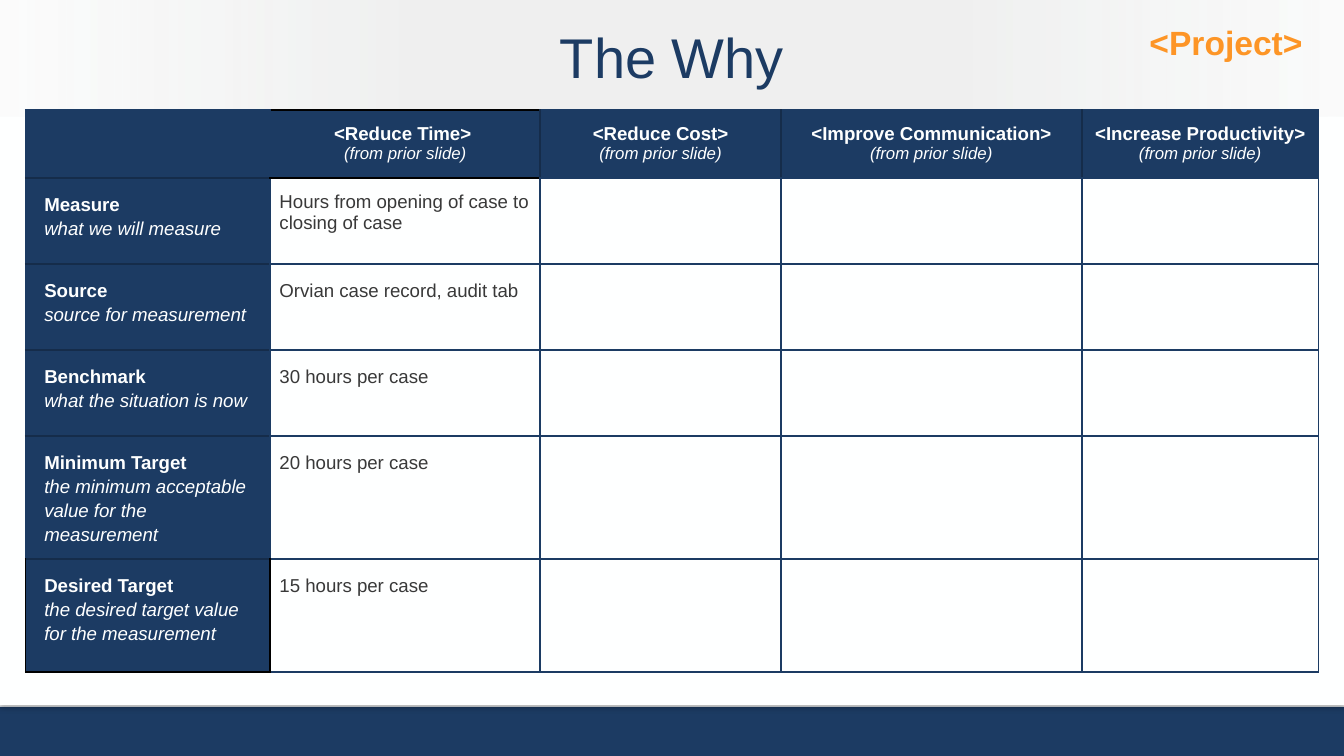
from pptx import Presentation
from pptx.dml.color import RGBColor
from pptx.enum.shapes import MSO_SHAPE
from pptx.enum.text import MSO_ANCHOR, PP_ALIGN
from pptx.oxml import parse_xml
from pptx.oxml.ns import nsdecls
from pptx.util import Inches, Pt

# Content
TITLE = "The Why"
PROJECT = "<Project>"
LINE_BREAK, NEW_PARAGRAPH = "\v", "\n"
GOALS = [  # goal, what separates it from its note
    ("<Reduce Time> ", LINE_BREAK),
    ("<Reduce Cost>", NEW_PARAGRAPH),
    ("<Improve Communication>", LINE_BREAK),
    ("<Increase Productivity>", LINE_BREAK),
]
GOAL_NOTE = "(from prior slide)"
MEASURES = [  # label, explanation, value for the first goal
    ("Measure", "what we will measure", "Hours from opening of case to closing of case"),
    ("Source", "source for measurement", "Orvian case record, audit tab"),
    ("Benchmark", "what the situation is now", "30 hours per case"),
    ("Minimum Target", "the minimum acceptable value for the measurement", "20 hours per case"),
    ("Desired Target", "the desired target value for the measurement", "15 hours per case"),
]
COLUMN_WIDTHS = [1.82, 2.01, 1.79, 2.24, 1.76]
ROW_HEIGHTS = [0.38, 0.64, 0.64, 0.64, 0.86, 0.84]

# Style
SLIDE_WIDTH = Inches(10)
SLIDE_HEIGHT = SLIDE_WIDTH * 9 // 16
FONT = "Arial"
NAVY, DARK_NAVY, BLACK = "1C3B63", "152C4A", "000000"
WHITE, GREY, ORANGE = "FEFFFF", "393939", "FD9526"
BAND_STOPS = [(0, 6), (29, 25), (69, 25), (99, 5)]  # position and opacity, percent


def color(hex_code):
    return RGBColor.from_string(hex_code)


def style_font(text, size, hex_code, bold=False, italic=False):
    """Set the font of a paragraph or a run."""
    font = text.font
    font.name, font.size = FONT, Pt(size)
    font.bold, font.italic = bold, italic
    font.color.rgb = color(hex_code)


def add_rectangle(slide, top, height, fill):
    shape = slide.shapes.add_shape(
        MSO_SHAPE.RECTANGLE, 0, Inches(top), SLIDE_WIDTH, Inches(height))
    shape.shadow.inherit = False
    shape.fill.solid()
    shape.fill.fore_color.rgb = color(fill)
    shape.line.fill.background()
    return shape


def add_backdrop(slide):
    slide.background.fill.solid()
    slide.background.fill.fore_color.rgb = color(WHITE)
    add_rectangle(slide, 5.26, 0.37, NAVY)

    # White page with a soft shadow over the footer
    page = add_rectangle(slide, 0, 5.24, WHITE)
    page.line.color.rgb = color(WHITE)
    page.line.width = Pt(0.75)
    properties = page.element.spPr
    properties.remove(properties.find("{*}effectLst"))
    properties.append(parse_xml(
        f'<a:effectLst {nsdecls("a")}>'
        f'<a:outerShdw blurRad="{Pt(3.1)}" dist="{Pt(1.8)}" dir="5400000" rotWithShape="0">'
        f'<a:srgbClr val="{BLACK}"><a:alpha val="35000"/></a:srgbClr>'
        '</a:outerShdw></a:effectLst>'))

    # Translucent title band
    band = add_rectangle(slide, 0, 0.87, WHITE)
    stops = "".join(
        f'<a:gs pos="{position * 1000}"><a:srgbClr val="C4C5C4">'
        f'<a:alpha val="{opacity * 1000}"/></a:srgbClr></a:gs>'
        for position, opacity in BAND_STOPS)
    properties = band.element.spPr
    properties.replace(properties.find("{*}solidFill"), parse_xml(
        f'<a:gradFill {nsdecls("a")}><a:gsLst>{stops}</a:gsLst>'
        '<a:lin ang="10800000" scaled="0"/></a:gradFill>'))


def fill_heading(shape, text, size, hex_code, alignment, anchor):
    frame = shape.text_frame
    frame.word_wrap = True
    frame.vertical_anchor = anchor
    frame.margin_left = frame.margin_right = Inches(0.1)
    frame.margin_top = frame.margin_bottom = Inches(0.1)
    frame.text = text
    paragraph = frame.paragraphs[0]
    paragraph.alignment = alignment
    style_font(paragraph, size, hex_code, bold=hex_code == ORANGE)


def vertical_edge(row, boundary):
    if row == 0 and boundary in (2, 3, 4):
        return DARK_NAVY
    return BLACK if row == 5 and boundary < 2 else NAVY


def horizontal_edge(boundary, column):
    if column == 0 and 0 < boundary < 6:
        return DARK_NAVY
    return BLACK if (boundary, column) in [(0, 1), (1, 1), (6, 0)] else NAVY


def format_cell(cell, row, column):
    edges = {
        "lnL": vertical_edge(row, column), "lnR": vertical_edge(row, column + 1),
        "lnT": horizontal_edge(row, column), "lnB": horizontal_edge(row + 1, column),
    }
    cell.margin_left = cell.margin_right = Inches(0.07)
    cell.margin_top = cell.margin_bottom = Inches(0.1)
    properties = cell._tc.get_or_add_tcPr()
    for tag, hex_code in edges.items():
        properties.append(parse_xml(
            f'<a:{tag} {nsdecls("a")} w="{Pt(1)}"><a:solidFill>'
            f'<a:srgbClr val="{hex_code}"/></a:solidFill></a:{tag}>'))
    if row == 0 or column == 0:
        cell.fill.solid()
        cell.fill.fore_color.rgb = color(NAVY)
    else:
        cell.fill.background()


def write_pair(cell, label, separator, note, note_size):
    """Write a bold label with an italic note below it."""
    cell.text = label + separator + note
    paragraphs = cell.text_frame.paragraphs
    style_font(paragraphs[0], 10, WHITE, bold=True)
    note_text = paragraphs[-1] if separator == NEW_PARAGRAPH else paragraphs[0].runs[-1]
    style_font(note_text, note_size, WHITE, italic=True)
    return paragraphs


def add_measure_table(slide):
    table = slide.shapes.add_table(
        len(ROW_HEIGHTS), len(COLUMN_WIDTHS), Inches(0.19), Inches(0.82),
        Inches(sum(COLUMN_WIDTHS)), Inches(sum(ROW_HEIGHTS))).table
    table.first_row = table.horz_banding = False
    for column, width in zip(table.columns, COLUMN_WIDTHS):
        column.width = Inches(width)
    for row, height in zip(table.rows, ROW_HEIGHTS):
        row.height = Inches(height)
    for row in range(len(ROW_HEIGHTS)):
        for column in range(len(COLUMN_WIDTHS)):
            format_cell(table.cell(row, column), row, column)

    # Header row
    for column, (goal, separator) in enumerate(GOALS, start=1):
        for paragraph in write_pair(table.cell(0, column), goal, separator, GOAL_NOTE, 9):
            paragraph.alignment = PP_ALIGN.CENTER

    # Labels and values
    for row, (label, explanation, value) in enumerate(MEASURES, start=1):
        for paragraph in write_pair(table.cell(row, 0), label, NEW_PARAGRAPH, explanation, 10):
            paragraph.line_spacing = 1.15
            paragraph._p.get_or_add_pPr().set("marL", str(Inches(0.07)))
        cell = table.cell(row, 1)
        cell.text = value
        paragraph = cell.text_frame.paragraphs[0]
        paragraph.line_spacing = 1.0 if row == 1 else 1.15
        style_font(paragraph, 10, GREY)


def main():
    presentation = Presentation()
    presentation.slide_width = SLIDE_WIDTH
    presentation.slide_height = SLIDE_HEIGHT
    slide = presentation.slides.add_slide(presentation.slide_layouts[5])
    add_backdrop(slide)

    # Title, brought in front of the backdrop
    title = slide.shapes.title
    title.element.getparent().append(title.element)
    title.left, title.top = Inches(0), Inches(0.16)
    title.width, title.height = SLIDE_WIDTH, Inches(0.52)
    fill_heading(title, TITLE, 30, NAVY, PP_ALIGN.CENTER, MSO_ANCHOR.MIDDLE)

    add_measure_table(slide)

    # Project tag
    tag = slide.shapes.add_textbox(Inches(8.34), Inches(0.06), Inches(1.45), Inches(0.49))
    fill_heading(tag, PROJECT, 18, ORANGE, PP_ALIGN.RIGHT, MSO_ANCHOR.TOP)
    presentation.save("out.pptx")


if __name__ == "__main__":
    main()
